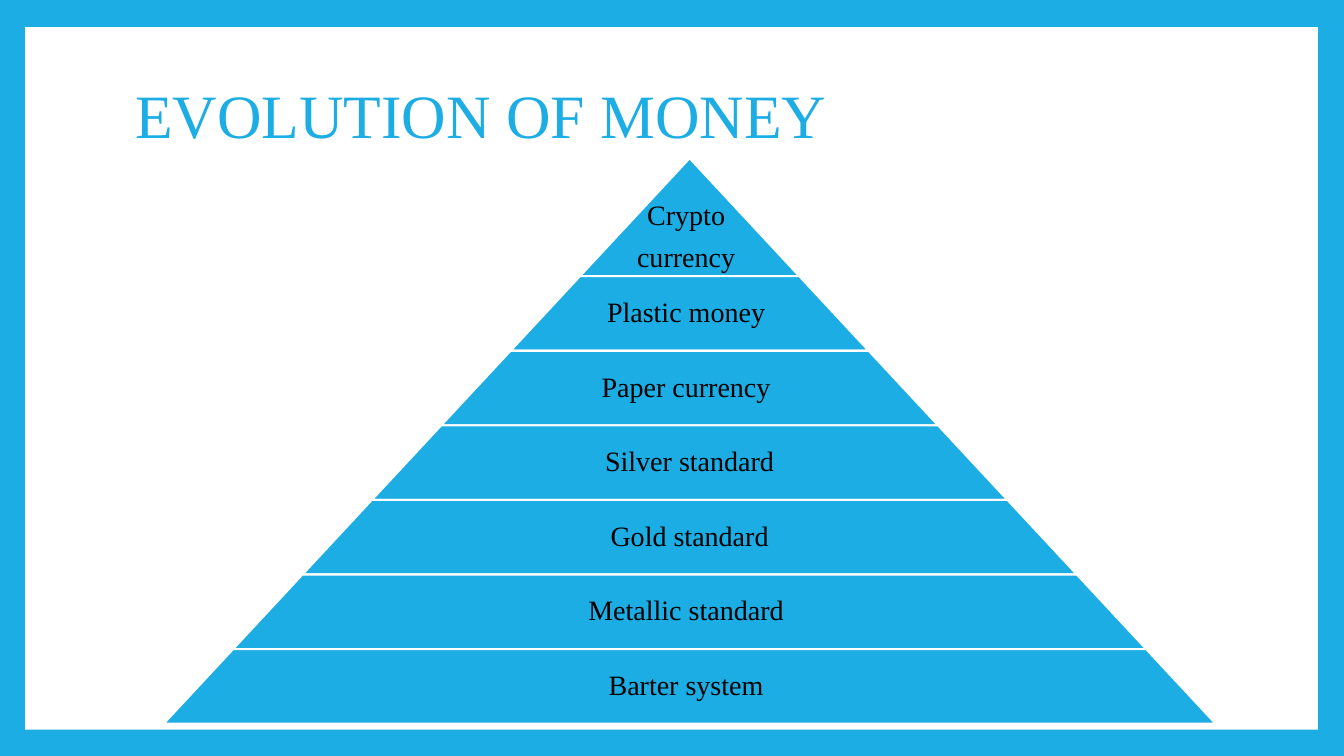
from pptx import Presentation
from pptx.dml.color import RGBColor
from pptx.enum.shapes import MSO_SHAPE
from pptx.enum.text import MSO_ANCHOR, MSO_AUTO_SIZE, PP_ALIGN
from pptx.util import Inches, Pt

RECT, TRAPEZOID = MSO_SHAPE.RECTANGLE, MSO_SHAPE.TRAPEZOID
MIDDLE, NO_FIT = MSO_ANCHOR.MIDDLE, MSO_AUTO_SIZE.NONE
LEFT, CENTER = PP_ALIGN.LEFT, PP_ALIGN.CENTER
COLORS = {"blue": "1CADE4", "white": "FFFFFF", "black": "000000"}
LEVELS = ["Crypto \ncurrency ", "Plastic money ", "Paper currency ", "Silver standard",
          "Gold standard", "Metallic standard ", "Barter system "]
AXIS, APEX, TIP, STEP, SLOPE = 6.84, 1.57, 1.17, 0.74, 0.93


class Page:
    font = "Times New Roman"

    def __init__(self, deck):
        self.slide = deck.slides.add_slide(deck.slide_layouts[5])
        self.shapes = self.slide.shapes
        self.paint(self.slide.background.fill, "blue")

    def paint(self, fill, color):
        fill.solid()
        fill.fore_color.rgb = RGBColor.from_string(COLORS[color])

    def block(self, kind, box, color, line=None):
        shape = self.shapes.add_shape(kind, *map(Inches, box))
        shape.shadow.inherit = False
        self.paint(shape.fill, color)
        if line:
            self.paint(shape.line.fill, line)
            shape.line.width = Pt(1.5)
        else:
            shape.line.fill.background()
        return shape

    def style(self, frame, text, size, color, align):
        frame.text = text
        frame.word_wrap = True
        frame.auto_size = NO_FIT
        frame.vertical_anchor = MIDDLE
        for para in frame.paragraphs:
            para.alignment = align
            para.line_spacing = 0.9
            for run in para.runs:
                run.font.name = self.font
                run.font.size = Pt(size)
                run.font.color.rgb = RGBColor.from_string(COLORS[color])

    def title(self, text, box):
        shape = self.shapes.title
        shape.left, shape.top, shape.width, shape.height = map(Inches, box)
        self.style(shape.text_frame, text, 44, "blue", LEFT)
        tree = shape.element.getparent()
        tree.remove(shape.element)
        tree.append(shape.element)

    def label(self, text, box, top):
        frame = self.shapes.add_textbox(*map(Inches, box)).text_frame
        self.style(frame, text, 20, "black", CENTER)
        frame.margin_left = frame.margin_right = frame.margin_bottom = Inches(0.03)
        frame.margin_top = Inches(top)
        for para in frame.paragraphs:
            para.space_after = Pt(8)

    def level(self, rank, text):
        top = APEX + (TIP + (rank - 1) * STEP if rank else 0)
        high = STEP if rank else TIP
        half = SLOPE * (top + high - APEX)
        box = (AXIS - half, top, 2 * half, high)
        self.block(TRAPEZOID, box, "blue", "white").adjustments[0] = SLOPE
        self.label(text, box, 0.03 if rank else 0.43)


def main():
    deck = Presentation()
    deck.slide_width, deck.slide_height = Inches(13.33), Inches(7.5)
    page = Page(deck)
    page.block(RECT, (0.25, 0.27, 12.82, 6.97), "white")
    page.title("EVOLUTION OF MONEY", (1.24, 0.44, 10.8, 1.48))
    for rank, text in enumerate(LEVELS):
        page.level(rank, text)
    deck.save("out.pptx")


if __name__ == "__main__":
    main()
